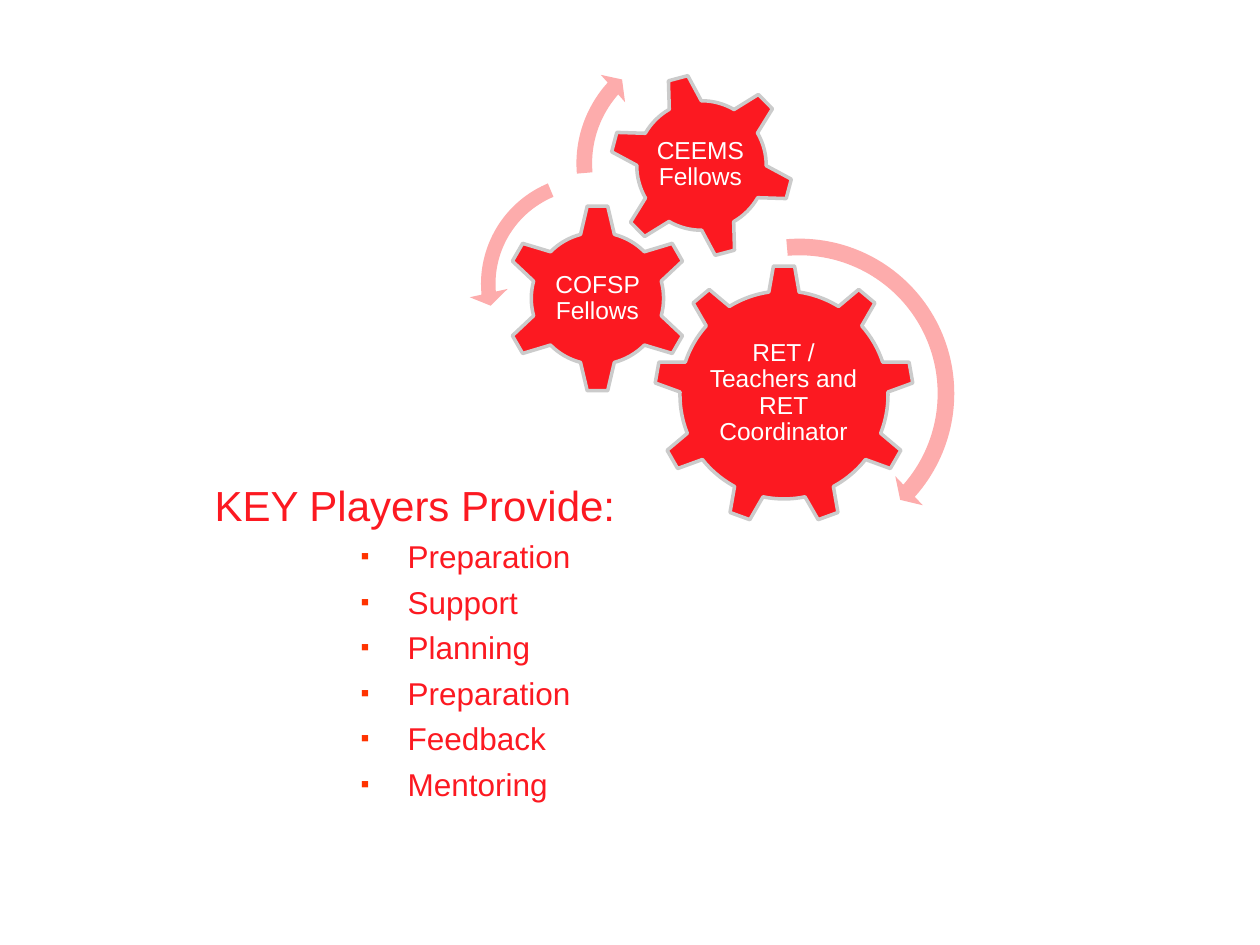
from dataclasses import dataclass

from lxml import etree
from pptx import Presentation
from pptx import util as u
from pptx.dml.color import RGBColor
from pptx.enum import shapes, text
from pptx.oxml.ns import qn

EMU_PER_PX = 914400 / 126


@dataclass(frozen=True)
class Theme:
    font: str = "Arial"
    red: str = "FC1921"
    pink: str = "FDACAC"
    outline: str = "CBCBCB"
    white: str = "FFFFFF"
    bullet: str = "FF3300"
    heading_size: int = 24
    item_size: int = 18
    gear_size: int = 14


@dataclass(frozen=True)
class Frame:
    left: int
    top: int
    width: int
    height: int

    def emu(self) -> list[u.Emu]:
        return [px(n) for n in (self.left, self.top, self.width, self.height)]


@dataclass(frozen=True)
class Gear:
    kind: shapes.MSO_SHAPE
    frame: Frame
    label: str
    label_frame: Frame
    rotation: int = 0


@dataclass(frozen=True)
class Arrow:
    kind: shapes.MSO_SHAPE
    frame: Frame
    adjustments: tuple[float, ...]


THEME = Theme()
KIND = shapes.MSO_SHAPE
GEARS = [
    Gear(KIND.GEAR_9, Frame(654, 265, 260, 260),
         "RET / Teachers and RET Coordinator", Frame(706, 326, 155, 134)),
    Gear(KIND.GEAR_6, Frame(503, 204, 189, 189),
         "COFSP Fellows", Frame(551, 252, 93, 93)),
    Gear(KIND.GEAR_6, Frame(609, 73, 185, 185),
         "CEEMS Fellows", Frame(649, 113, 103, 103), 345),
]
ARROWS = [
    Arrow(KIND.CIRCULAR_ARROW, Frame(633, 227, 333, 333),
          (0.05, 2.99, 24.95, 159.08, 0.06)),
    Arrow(KIND.LEFT_CIRCULAR_ARROW, Frame(469, 163, 242, 242),
          (0.06, 4.3, 104.89, 148.38, 0.08)),
    Arrow(KIND.CIRCULAR_ARROW, Frame(566, 33, 261, 261),
          (0.06, 3.94, 133.14, 105.08, 0.07)),
]
ITEMS = ["Preparation", "Support", "Planning", "Preparation", "Feedback", "Mentoring"]


def px(count: int) -> u.Emu:
    return u.Emu(round(count * EMU_PER_PX))


def add_span(para, words: str, size: int, color: str) -> None:
    span = para.add_run()
    span.text = words
    span.font.name = THEME.font
    span.font.size = u.Pt(size)
    span.font.color.rgb = RGBColor.from_string(color)


def set_indent(para, margin: int, hanging: int = 0):
    properties = para._p.get_or_add_pPr()
    properties.set("marL", str(px(margin)))
    properties.set("indent", str(px(-hanging)))
    return properties


def set_bullet(para) -> None:
    properties = set_indent(para, 237, 47)
    color = etree.SubElement(properties, qn("a:buClr"))
    etree.SubElement(color, qn("a:srgbClr"), val=THEME.bullet)
    etree.SubElement(properties, qn("a:buSzPct"), val="80000")
    etree.SubElement(properties, qn("a:buFont"), typeface=THEME.font)
    etree.SubElement(properties, qn("a:buChar"), char="▪")


def fill_body(body) -> None:
    body.left, body.top, body.width, body.height = Frame(158, 473, 1071, 336).emu()
    frame = body.text_frame
    frame.auto_size = text.MSO_AUTO_SIZE.NONE
    frame.vertical_anchor = text.MSO_ANCHOR.BOTTOM
    heading = frame.paragraphs[0]
    heading.space_before = u.Pt(0)
    etree.SubElement(set_indent(heading, 44), qn("a:buNone"))
    add_span(heading, "KEY Players Provide:", THEME.heading_size, THEME.red)
    for item in ITEMS:
        para = frame.add_paragraph()
        para.level = 3
        para.space_before = u.Pt(4.4)
        set_bullet(para)
        add_span(para, item, THEME.item_size, THEME.red)


def add_filled(slide, kind: shapes.MSO_SHAPE, frame: Frame, color: str):
    shape = slide.shapes.add_shape(kind, *frame.emu())
    shape.shadow.inherit = False
    shape.fill.solid()
    shape.fill.fore_color.rgb = RGBColor.from_string(color)
    return shape


def draw_gear(slide, gear: Gear) -> None:
    shape = add_filled(slide, gear.kind, gear.frame, THEME.red)
    shape.rotation = gear.rotation
    shape.line.color.rgb = RGBColor.from_string(THEME.outline)
    shape.line.width = u.Pt(2)
    box = slide.shapes.add_textbox(*gear.label_frame.emu()).text_frame
    box.word_wrap = True
    box.vertical_anchor = text.MSO_ANCHOR.MIDDLE
    box.margin_left = box.margin_right = box.margin_top = box.margin_bottom = px(2)
    para = box.paragraphs[0]
    para.alignment = text.PP_ALIGN.CENTER
    para.line_spacing = 0.9
    add_span(para, gear.label, THEME.gear_size, THEME.white)


def draw_arrow(slide, arrow: Arrow) -> None:
    shape = add_filled(slide, arrow.kind, arrow.frame, THEME.pink)
    shape.line.fill.background()
    for index, value in enumerate(arrow.adjustments):
        shape.adjustments[index] = value


def main() -> None:
    deck = Presentation()
    deck.slide_width, deck.slide_height = px(1260), px(945)
    page = deck.slides.add_slide(deck.slide_layouts.get_by_name("Title and Content"))
    title = page.shapes.title.element
    title.getparent().remove(title)
    fill_body(page.placeholders[1])
    for gear in GEARS:
        draw_gear(page, gear)
    for arrow in ARROWS:
        draw_arrow(page, arrow)
    deck.save("out.pptx")


if __name__ == "__main__":
    main()
